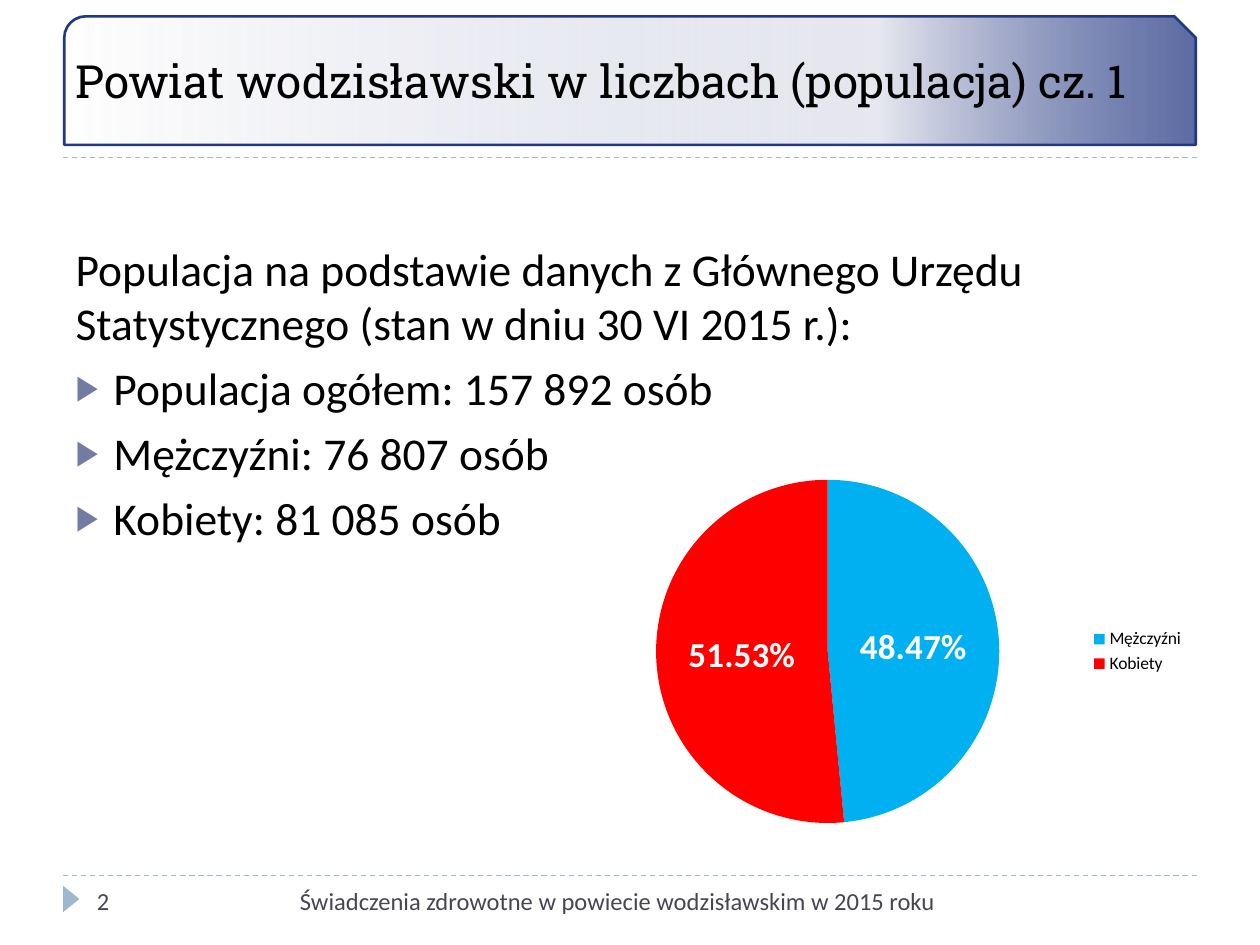
from lxml.etree import SubElement
from pptx import Presentation
from pptx.chart.data import CategoryChartData
from pptx.dml.color import RGBColor
from pptx.enum.chart import XL_CHART_TYPE, XL_LABEL_POSITION, XL_LEGEND_POSITION
from pptx.enum.dml import MSO_LINE
from pptx.enum.shapes import MSO_CONNECTOR, MSO_SHAPE
from pptx.enum.text import MSO_ANCHOR, PP_ALIGN
from pptx.oxml import parse_xml
from pptx.oxml.ns import nsdecls, qn
from pptx.util import Inches, Pt


def rgb(value):
    return RGBColor.from_string(value)


def add_run(paragraph, text, size, color, font="Calibri"):
    run = paragraph.add_run()
    run.text = text
    run.font.size = Pt(size)
    run.font.name = font
    run.font.color.rgb = rgb(color)


prs = Presentation()
prs.slide_width, prs.slide_height = Inches(10), Inches(7.5)
slide = prs.slides.add_slide(prs.slide_layouts[1])
shapes = slide.shapes
title, body = shapes.title, slide.placeholders[1]

# Dashed rules under the title and above the footer
for y in (1.25, 6.95):
    rule = shapes.add_connector(MSO_CONNECTOR.STRAIGHT, Inches(0.5), Inches(y), Inches(9.5), Inches(y))
    rule.line.color.rgb = rgb("9FB8CD")
    rule.line.width = Pt(0.75)
    rule.line.dash_style = MSO_LINE.DASH
    SubElement(rule._element.spPr, qn("a:effectLst"))

# Footer marker
marker = shapes.add_shape(MSO_SHAPE.ISOSCELES_TRIANGLE, Inches(0.46), Inches(7.07), Inches(0.21), Inches(0.13))
marker.rotation = 90
marker.shadow.inherit = False
marker.fill.solid()
marker.fill.fore_color.rgb = rgb("9FB8CD")
marker.line.fill.background()

# Title banner, fading from right to left
banner = shapes.add_shape(MSO_SHAPE.SNIP_ROUND_RECTANGLE, Inches(0.51), Inches(0.13), Inches(8.98), Inches(1.02))
banner.shadow.inherit = False
banner.line.color.rgb = rgb("233883")
banner.line.width = Pt(1.5)
stops = "".join(
    f'<a:gs pos="{pos * 1000}"><a:srgbClr val="{color}"><a:alpha val="{alpha * 1000}"/></a:srgbClr></a:gs>'
    for pos, color, alpha in ((0, "233883", 73), (28, "E6E7EF", 100), (100, "CCD0E0", 0))
)
banner._element.spPr.find(qn("a:prstGeom")).addnext(parse_xml(
    f'<a:gradFill {nsdecls("a")} rotWithShape="1"><a:gsLst>{stops}</a:gsLst>'
    '<a:lin ang="10800000" scaled="0"/></a:gradFill>'
))

# Title, in front of the banner
banner._element.addnext(title._element)
title.left, title.top, title.width, title.height = Inches(0.5), Inches(0.13), Inches(9), Inches(1.02)
title.text_frame.vertical_anchor = MSO_ANCHOR.MIDDLE
heading = title.text_frame.paragraphs[0]
heading.alignment = PP_ALIGN.LEFT
add_run(heading, "Powiat wodzisławski w liczbach (populacja) cz. 1", 26.1, "000000", "Roboto Slab")

# Population list: an unbulleted lead-in, then bulleted figures
body.left, body.top, body.width, body.height = Inches(0.5), Inches(1.86), Inches(9), Inches(4.87)
population = (
    "Populacja na podstawie danych z Głównego Urzędu Statystycznego (stan w dniu 30 VI 2015 r.):",
    "Populacja ogółem: 157 892 osób",
    "Mężczyźni: 76 807 osób",
    "Kobiety: 81 085 osób",
)
for i, text in enumerate(population):
    item = body.text_frame.paragraphs[0] if i == 0 else body.text_frame.add_paragraph()
    item.space_before = Pt(6 if i else 0)
    add_run(item, text, 26, "000000")
    props = item._p.get_or_add_pPr()
    indent = Inches(0.3) if i else 0
    props.set("marL", str(indent))
    props.set("indent", str(-indent))
    if i == 0:
        SubElement(props, qn("a:buNone"))
    else:
        bullet_color = SubElement(props, qn("a:buClr"))
        SubElement(bullet_color, qn("a:srgbClr"), val="727CA3")
        SubElement(props, qn("a:buSzPct"), val="76000")
        SubElement(props, qn("a:buChar"), char="▶")

# Slide number and footer
for left, width, text, align in (
    (0.67, 2.17, "2", PP_ALIGN.LEFT),
    (2.09, 5.43, "Świadczenia zdrowotne w powiecie wodzisławskim w 2015 roku", PP_ALIGN.RIGHT),
):
    footer = shapes.add_textbox(Inches(left), Inches(6.98), Inches(width), Inches(0.4))
    footer.text_frame.word_wrap = True
    footer_line = footer.text_frame.paragraphs[0]
    footer_line.alignment = align
    add_run(footer_line, text, 14, "464653")

# Population split by sex
split = CategoryChartData(number_format="0.00%")
split.categories = ["Mężczyźni", "Kobiety"]
split.add_series("Series 1", (0.4847, 0.5153))
pie = shapes.add_chart(XL_CHART_TYPE.PIE, Inches(4.5), Inches(3.67), Inches(5), Inches(3), split).chart
pie.has_title = False
pie.font.size = Pt(10)
pie.font.name = "Calibri"
pie.font.color.rgb = rgb("000000")
pie.has_legend = True
pie.legend.position = XL_LEGEND_POSITION.RIGHT
pie.legend.include_in_layout = False

plot = pie.plots[0]
plot.vary_by_categories = True
for i, color in enumerate(("00B0F0", "FF0000")):
    sector = plot.series[0].points[i].format
    sector.fill.solid()
    sector.fill.fore_color.rgb = rgb(color)

labels = plot.series[0].data_labels
labels.show_value = True
labels.number_format = "0.00%"
labels.number_format_is_linked = False
labels.position = XL_LABEL_POSITION.CENTER
labels.font.size = Pt(20)
labels.font.bold = True
labels.font.name = "Calibri"
labels.font.color.rgb = rgb("FFFFFF")

prs.save("out.pptx")
